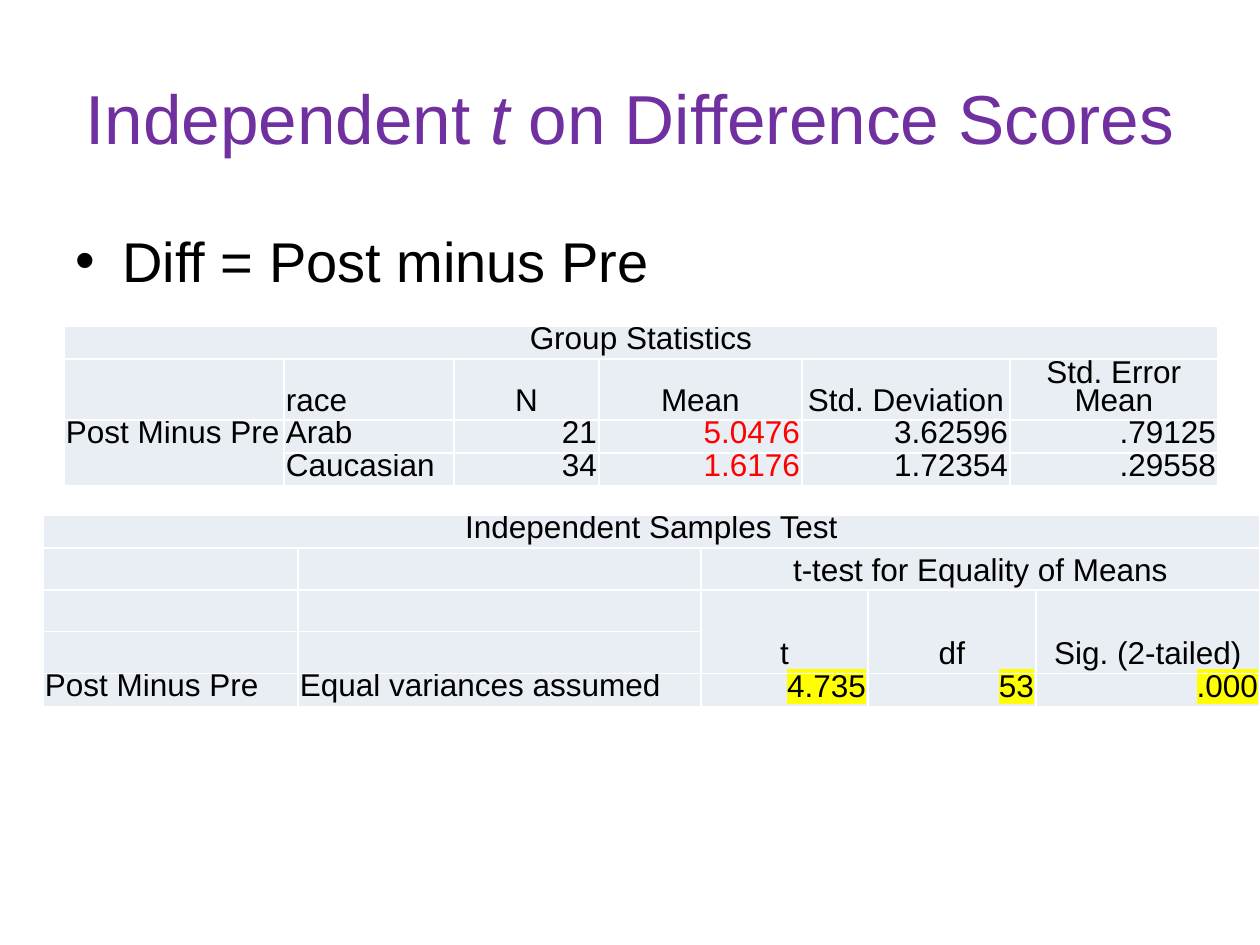
from dataclasses import dataclass
from lxml import etree
from pptx import Presentation
from pptx.dml.color import RGBColor
from pptx.enum.text import MSO_ANCHOR, PP_ALIGN
from pptx.oxml.ns import qn
from pptx.util import Emu, Pt

LEFT, CENTER, RIGHT = PP_ALIGN.LEFT, PP_ALIGN.CENTER, PP_ALIGN.RIGHT
TOP, MIDDLE, BOTTOM = MSO_ANCHOR.TOP, MSO_ANCHOR.MIDDLE, MSO_ANCHOR.BOTTOM


@dataclass(frozen=True)
class Theme:
    font: str = "Arial"
    heading: str = "7030A0"
    ink: str = "000000"
    mean: str = "FF0000"
    marker: str = "FFFF00"
    cell: str = "E9EDF4"
    border: str = "FFFFFF"
    heading_size: float = 39.6
    body_size: float = 32
    table_size: float = 18
    table_line: float = 16


THEME = Theme()

# Cell roles: alignment, anchor, text colour, highlight colour
ROLES = {
    "caption": (CENTER, MIDDLE, THEME.ink, None),
    "head": (CENTER, BOTTOM, THEME.ink, None),
    "row head": (LEFT, BOTTOM, THEME.ink, None),
    "label": (LEFT, TOP, THEME.ink, None),
    "number": (RIGHT, MIDDLE, THEME.ink, None),
    "mean": (RIGHT, MIDDLE, THEME.mean, None),
    "result": (RIGHT, MIDDLE, THEME.ink, THEME.marker),
}


def px(count):
    return Emu(round(count * 914400 / 126))


def add_run(paragraph, text, size, color, italic=False, highlight=None):
    run = paragraph.add_run()
    run.text = text
    run.font.size = Pt(size)
    run.font.italic = italic
    run.font.color.rgb = RGBColor.from_string(color)
    run.font.name = THEME.font
    if highlight:
        marker = etree.Element(qn("a:highlight"))
        etree.SubElement(marker, qn("a:srgbClr"), val=highlight)
        run.font.fill  # the marker follows the text fill
        run._r.rPr.find(qn("a:solidFill")).addnext(marker)


def add_text_box(slide, left, top, width, height, anchor):
    frame = slide.shapes.add_textbox(px(left), px(top), px(width), px(height)).text_frame
    frame.word_wrap = True
    frame.vertical_anchor = anchor
    return frame.paragraphs[0]


def add_bullet(paragraph, indent):
    properties = paragraph._p.get_or_add_pPr()
    properties.set("marL", str(px(indent)))
    properties.set("indent", str(-px(indent)))
    etree.SubElement(properties, qn("a:buFont"), typeface=THEME.font)
    etree.SubElement(properties, qn("a:buChar"), char="•")


def add_borders(cell):
    properties = cell._tc.get_or_add_tcPr()
    for position, side in enumerate(("a:lnL", "a:lnR", "a:lnT", "a:lnB")):
        line = etree.Element(qn(side), w=str(Pt(1)))
        fill = etree.SubElement(line, qn("a:solidFill"))
        etree.SubElement(fill, qn("a:srgbClr"), val=THEME.border)
        properties.insert(position, line)


def style_cell(cell):
    cell.fill.solid()
    cell.fill.fore_color.rgb = RGBColor.from_string(THEME.cell)
    cell.margin_left = cell.margin_right = px(2)
    cell.margin_top = cell.margin_bottom = px(2)
    cell.text_frame.paragraphs[0].line_spacing = Pt(THEME.table_line)
    add_borders(cell)


def fill_cell(cell, text, role):
    alignment, anchor, color, highlight = ROLES[role]
    cell.vertical_anchor = anchor
    paragraph = cell.text_frame.paragraphs[0]
    paragraph.alignment = alignment
    add_run(paragraph, text, THEME.table_size, color, highlight=highlight)


def add_statistics_table(slide, left, top, widths, heights, rows, merges):
    """Each row maps a column to its (text, role); merges are corner pairs."""
    table = slide.shapes.add_table(len(heights), len(widths), px(left), px(top),
                                   px(sum(widths)), px(sum(heights))).table
    table.first_row = table.horz_banding = False
    for column, width in zip(table.columns, widths):
        column.width = px(width)
    for row, height in zip(table.rows, heights):
        row.height = px(height)
    for cell in table.iter_cells():
        style_cell(cell)
    for first, last in merges:
        table.cell(*first).merge(table.cell(*last))
    for row, entries in enumerate(rows):
        for column, (text, role) in entries.items():
            fill_cell(table.cell(row, column), text, role)


def columns(start, texts, *roles):
    return dict(enumerate(zip(texts, roles), start))


def main():
    deck = Presentation()
    deck.slide_width, deck.slide_height = px(1260), px(945)
    slide = deck.slides.add_slide(deck.slide_layouts[6])

    # Heading
    heading = add_text_box(slide, 63, 38, 1134, 157, MIDDLE)
    heading.alignment = CENTER
    for text, italic in (("Independent ", False), ("t", True), (" on Difference Scores", False)):
        add_run(heading, text, THEME.heading_size, THEME.heading, italic)

    # Definition of the difference score
    definition = add_text_box(slide, 63, 220, 1134, 624, TOP)
    definition.space_before = Pt(4)
    add_bullet(definition, 47)
    add_run(definition, "Diff = Post minus Pre", THEME.body_size, THEME.ink)

    # Group statistics
    group_roles = ("label", "number", "mean", "number", "number")
    add_statistics_table(
        slide, 64, 326, (220, 170, 145, 203, 208, 208), (33, 61, 33, 33),
        [
            {0: ("Group Statistics", "caption")},
            columns(1, ("race", "N", "Mean", "Std. Deviation", "Std. Error Mean"),
                    "row head", *["head"] * 4),
            columns(0, ("Post Minus Pre", "Arab", "21", "5.0476", "3.62596", ".79125"),
                    "label", *group_roles),
            columns(1, ("Caucasian", "34", "1.6176", "1.72354", ".29558"), *group_roles),
        ],
        [((0, 0), (0, 5)), ((2, 0), (3, 0))])

    # Independent samples test
    add_statistics_table(
        slide, 43, 515, (255, 403, 167, 168, 224), (33, 41, 41, 40, 33),
        [
            {0: ("Independent Samples Test", "caption")},
            {2: ("t-test for Equality of Means", "head")},
            columns(2, ("t", "df", "Sig. (2-tailed)"), *["head"] * 3),
            {},
            columns(0, ("Post Minus Pre", "Equal variances assumed", "4.735", "53", ".000"),
                    "label", "label", *["result"] * 3),
        ],
        [((0, 0), (0, 4)), ((1, 2), (1, 4))] + [((2, c), (3, c)) for c in (2, 3, 4)])

    deck.save("out.pptx")


if __name__ == "__main__":
    main()
